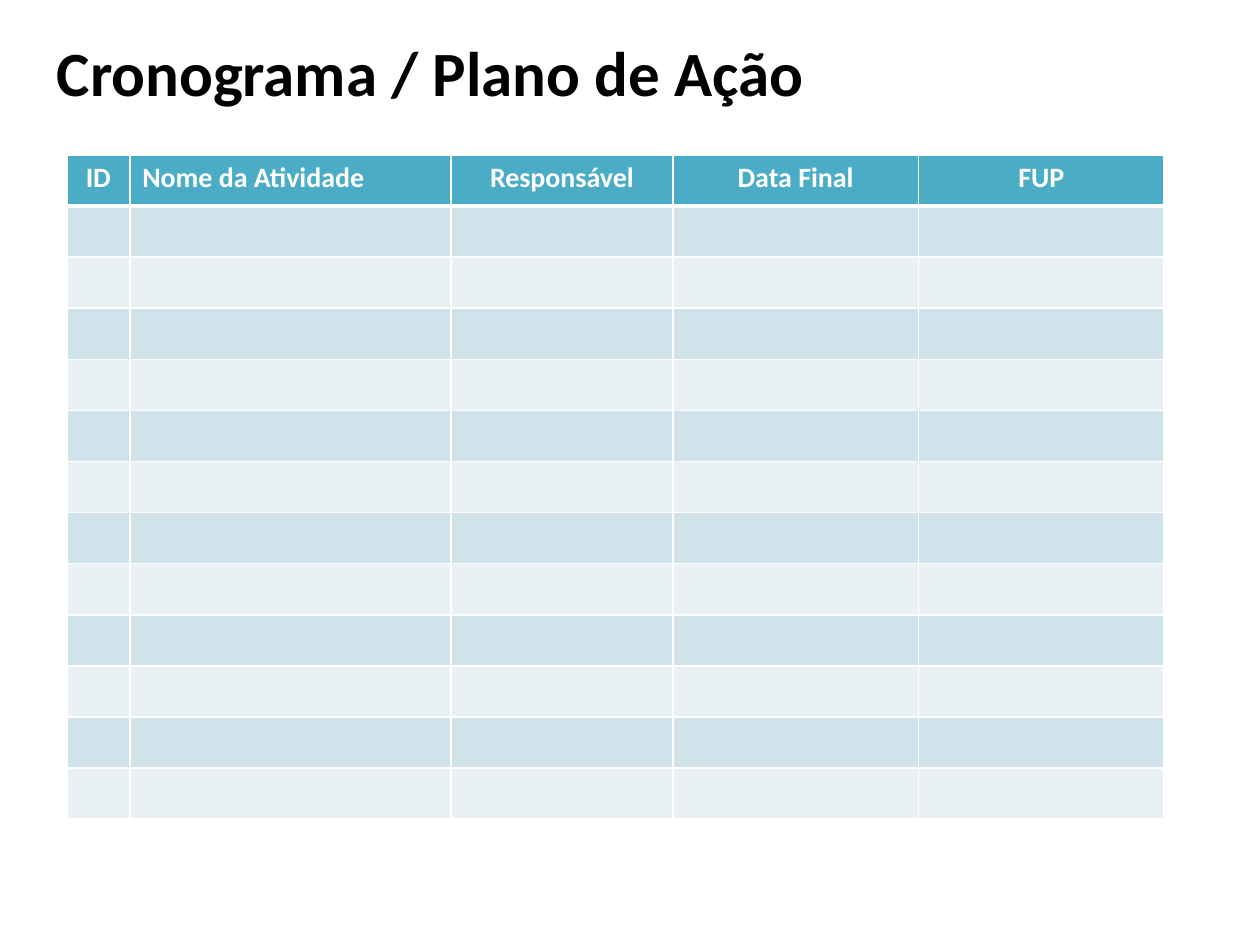
from lxml import etree
from pptx import Presentation
from pptx import util as u
from pptx.dml.color import RGBColor
from pptx.enum import text
from pptx.oxml import ns

COLORS = {
    "title": "000000",
    "header": "4BACC6",
    "header_text": "FFFFFF",
    "border": "FFFFFF",
    "odd_row": "D0E3EA",
    "even_row": "E9F1F5",
}
LEFT, CENTER = text.PP_ALIGN.LEFT, text.PP_ALIGN.CENTER
COLUMNS = [
    ("ID", 0.5, CENTER),
    ("Nome da Atividade", 2.55, LEFT),
    ("Responsável", 1.76, CENTER),
    ("Data Final", 1.95, CENTER),
    ("FUP", 1.95, CENTER),
]
ACTIVITY_ROWS = 12


def write(p, content, align, color, size):
    p.alignment = align
    r = p.add_run()
    r.text = content
    font_format = {"name": "Calibri", "size": u.Pt(size), "bold": True}
    for name, value in font_format.items():
        setattr(r.font, name, value)
    r.font.color.rgb = RGBColor.from_string(COLORS[color])


def set_borders(cell, widths):
    tcPr = cell._tc.get_or_add_tcPr()
    for side, width in widths.items():
        ln = etree.SubElement(tcPr, ns.qn(f"a:ln{side}"), w=str(u.Pt(width)))
        fill = etree.SubElement(ln, ns.qn("a:solidFill"))
        etree.SubElement(fill, ns.qn("a:srgbClr"), val=COLORS["border"])


def add_title(s, left, top, width, height):
    sp = s.shapes.title
    box = {"left": left, "top": top, "width": width, "height": height}
    for name, value in box.items():
        setattr(sp, name, value)
    tf = sp.text_frame
    tf.vertical_anchor = text.MSO_ANCHOR.MIDDLE
    tf.word_wrap = True
    write(tf.paragraphs[0], "Cronograma / Plano de Ação", LEFT, "title", 36)


def add_schedule(s, left, top, width, height):
    row_count = ACTIVITY_ROWS + 1
    table = s.shapes.add_table(
        row_count, len(COLUMNS), left, top, width, height
    ).table
    for row in table.rows:
        row.height = int(height / row_count)
    for col, (heading, col_width, align) in enumerate(COLUMNS):
        table.columns[col].width = u.Inches(col_width)
        for row in range(row_count):
            cell = table.cell(row, col)
            set_borders(cell, {
                "L": 1,
                "R": 1,
                "T": 3 if row == 1 else 1,
                "B": 3 if row == 0 else 1,
            })
            if row == 0:
                fill = "header"
                write(cell.text_frame.paragraphs[0], heading, align, "header_text", 16)
            else:
                fill = "odd_row" if row % 2 else "even_row"
            cell.fill.solid()
            cell.fill.fore_color.rgb = RGBColor.from_string(COLORS[fill])


def main():
    prs = Presentation()
    prs.slide_width, prs.slide_height = u.Inches(10), u.Inches(7.5)
    s = prs.slides.add_slide(prs.slide_layouts[5])
    add_title(s, u.Inches(0.35), u.Inches(0.21), u.Inches(9.15), u.Inches(0.71))
    add_schedule(s, u.Inches(0.53), u.Inches(1.23), u.Inches(8.72), u.Inches(5.27))
    prs.save("out.pptx")


if __name__ == "__main__":
    main()
